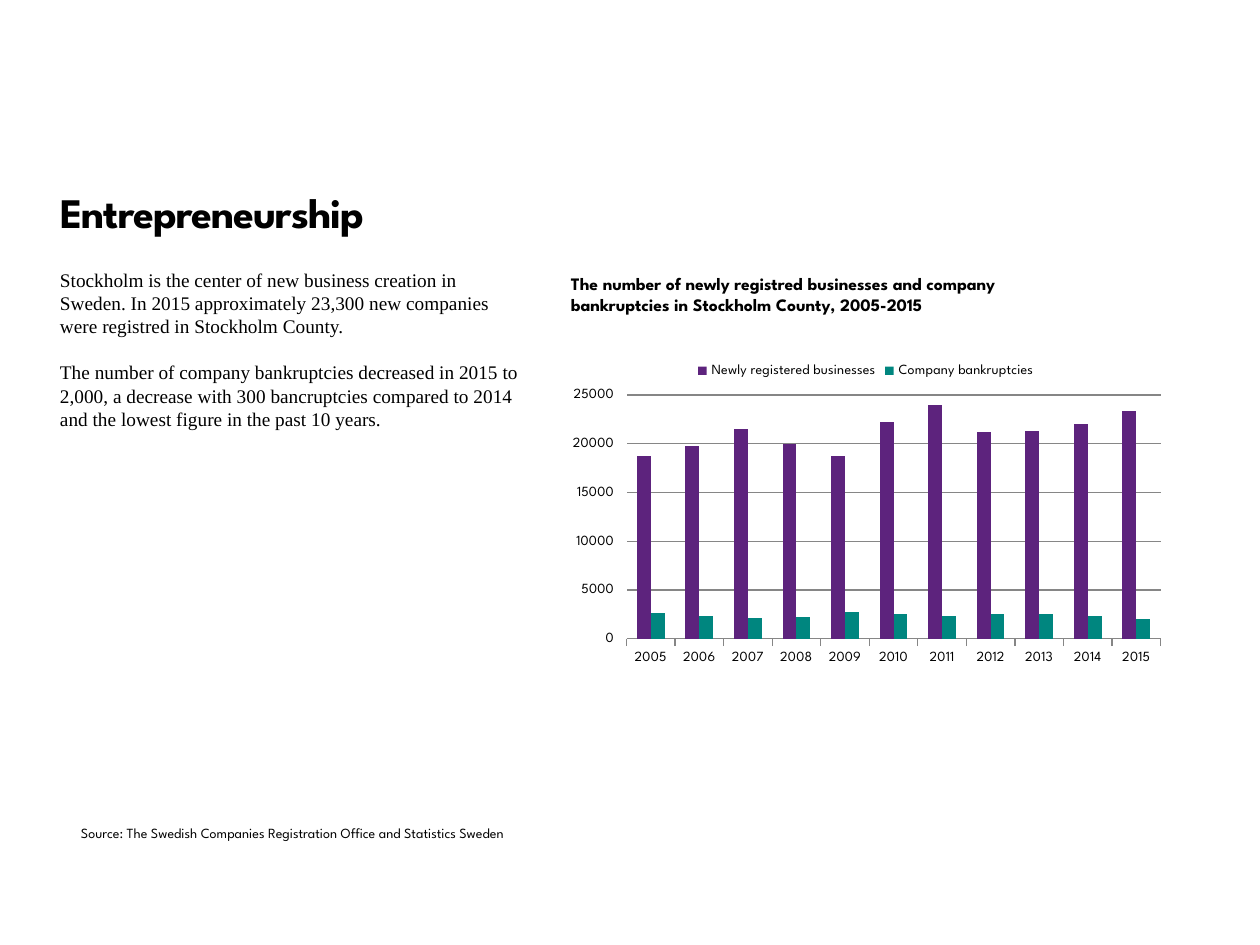
import pptx
import pptx.util
import pptx.chart.data
import pptx.dml.color
import pptx.enum.chart
import pptx.enum.text
import pptx.oxml

SCALE = 914400 / 126
HEAD = "League Spartan"
BODY = "Times New Roman"
BLACK = "000000"
GRAY = "868686"

YEARS = [str(year) for year in range(2005, 2016)]
SERIES = [
    ("Newly registered businesses", "5D237D",
     [18700, 19800, 21500, 20000, 18700, 22200, 24000, 21200, 21300, 22000, 23300]),
    ("Company bankruptcies", "00867F",
     [2600, 2300, 2100, 2200, 2700, 2500, 2300, 2500, 2500, 2300, 2000]),
]
PARAS = [
    "Stockholm is the center of new business creation in\v"
    "Sweden. In 2015 approximately 23,300 new companies\v"
    "were registred in Stockholm County.",
    "The number of company bankruptcies decreased in 2015 to\v"
    "2,000, a decrease with 300 bancruptcies compared to 2014\v"
    "and the lowest figure in the past 10 years.",
]


def px(num):
    return pptx.util.Emu(round(num * SCALE))


def color(code):
    return pptx.dml.color.RGBColor.from_string(code)


def style(font, size, name=HEAD, bold=False):
    font.size = pptx.util.Pt(size)
    font.name = name
    font.bold = bold
    font.color.rgb = color(BLACK)


def fill(shape, paras, size, name=HEAD, bold=False, line=None, gap=0):
    frame = shape.text_frame
    frame.word_wrap = True
    frame.auto_size = pptx.enum.text.MSO_AUTO_SIZE.NONE
    frame.vertical_anchor = pptx.enum.text.MSO_ANCHOR.TOP
    frame.margin_left = frame.margin_right = 0
    frame.margin_top = frame.margin_bottom = 0
    for i, text in enumerate(paras):
        para = frame.paragraphs[0] if i == 0 else frame.add_paragraph()
        para.text = text
        para.alignment = pptx.enum.text.PP_ALIGN.LEFT
        para.space_before = pptx.util.Pt(gap if i else 0)
        if line:
            para.line_spacing = pptx.util.Pt(line)
        for run in para.runs:
            style(run.font, size, name, bold)


def add_title(slide, text, left, top, width, height):
    title = slide.shapes.title
    title.left, title.top = px(left), px(top)
    title.width, title.height = px(width), px(height)
    fill(title, [text], 24, bold=True, line=28)
    for run in title.text_frame.paragraphs[0].runs:
        run.font._element.set("spc", "-50")


def add_text(slide, box, paras, size, **look):
    shape = slide.shapes.add_textbox(*map(px, box))
    fill(shape, paras, size, **look)


def set_plot(chart, x, y, w, h):
    """Fix the inner plot area, in shares of the chart."""
    area = chart._chartSpace.chart.plotArea
    for old in area.findall(pptx.oxml.ns.qn("c:layout")):
        area.remove(old)
    area.insert(0, pptx.oxml.parse_xml(
        f'<c:layout {pptx.oxml.ns.nsdecls("c")}><c:manualLayout>'
        '<c:layoutTarget val="inner"/><c:xMode val="edge"/><c:yMode val="edge"/>'
        f'<c:x val="{x}"/><c:y val="{y}"/><c:w val="{w}"/><c:h val="{h}"/>'
        '</c:manualLayout></c:layout>'))


def add_bars(slide, box):
    kinds = pptx.enum.chart
    data = pptx.chart.data.CategoryChartData(number_format="General")
    data.categories = YEARS
    for name, _, vals in SERIES:
        data.add_series(name, vals)
    chart = slide.shapes.add_chart(
        kinds.XL_CHART_TYPE.COLUMN_CLUSTERED, *map(px, box), data).chart
    style(chart.font, 8)
    chart.has_title = False

    # Legend
    chart.has_legend = True
    chart.legend.position = kinds.XL_LEGEND_POSITION.TOP
    chart.legend.include_in_layout = False
    style(chart.legend.font, 8)

    # Bars
    plot = chart.plots[0]
    plot.gap_width = 150
    plot.overlap = 0
    plot.vary_by_categories = False
    for bars, (_, code, _) in zip(plot.series, SERIES):
        bars.format.fill.solid()
        bars.format.fill.fore_color.rgb = color(code)

    # Axes
    cat, val = chart.category_axis, chart.value_axis
    for axis in (cat, val):
        axis.major_tick_mark = kinds.XL_TICK_MARK.OUTSIDE
        axis.minor_tick_mark = kinds.XL_TICK_MARK.NONE
        style(axis.tick_labels.font, 8)
    val.minimum_scale, val.maximum_scale, val.major_unit = 0, 25000, 5000
    val.has_major_gridlines = True
    for line in (cat.format.line, val.major_gridlines.format.line):
        line.color.rgb = color(GRAY)
        line.width = pptx.util.Pt(0.75)
    val.format.line.fill.background()
    set_plot(chart, 0.11, 0.14, 0.87, 0.76)


def main():
    deck = pptx.Presentation()
    deck.slide_width, deck.slide_height = px(1260), px(945)
    slide = deck.slides.add_slide(deck.slide_layouts[5])

    # Title and text on the left
    add_title(slide, "Entrepreneurship", 60, 188, 766, 111)
    add_text(slide, (60, 268, 580, 165), PARAS, 11,
             name=BODY, line=13.25, gap=13.25)

    # Chart with its heading
    add_text(slide, (571, 273, 539, 107),
             ["The number of newly registred businesses and company\v"
              "bankruptcies in Stockholm County, 2005-2015"], 10, bold=True)
    add_bars(slide, (559, 350, 614, 321))

    # Source line
    add_text(slide, (81, 825, 539, 29),
             ["Source: The Swedish Companies Registration Office and Statistics Sweden"], 8)

    deck.save("out.pptx")


if __name__ == "__main__":
    main()
